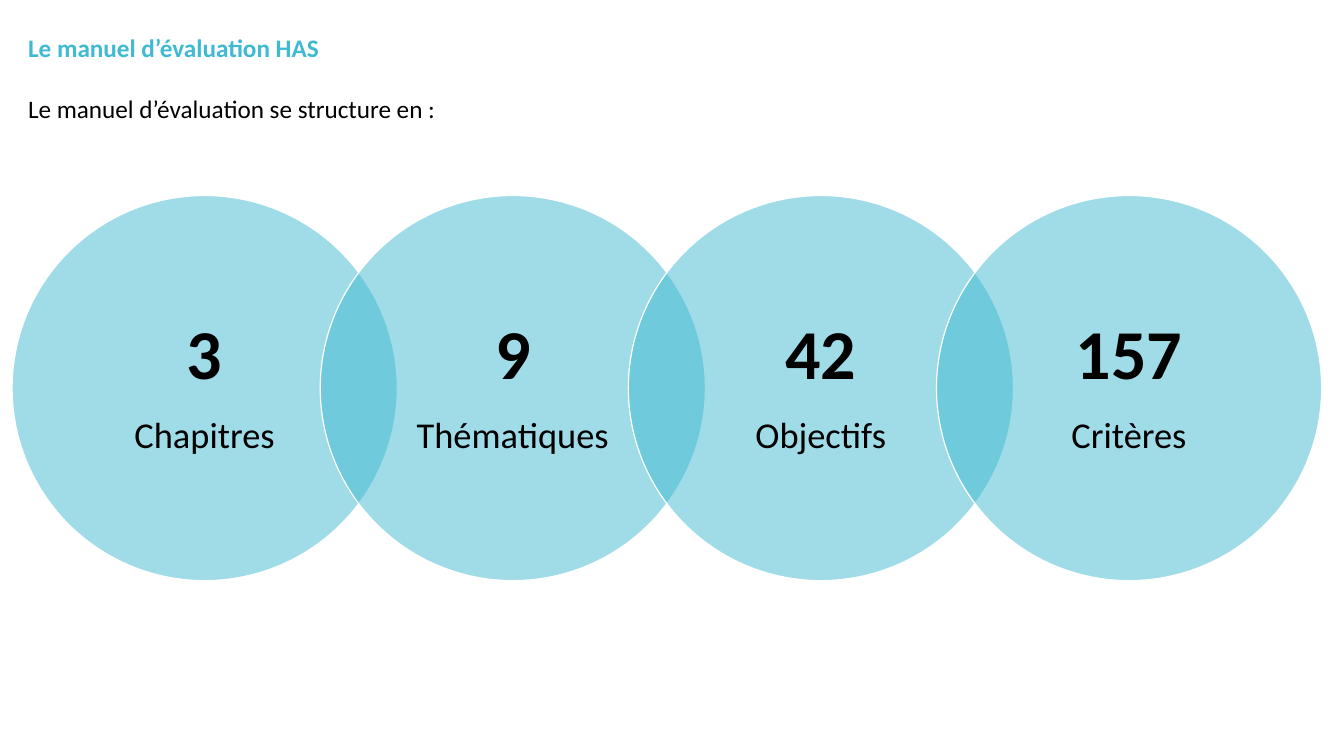
from dataclasses import dataclass

from lxml.etree import SubElement
from pptx import Presentation
from pptx.dml.color import RGBColor
from pptx.enum.shapes import MSO_SHAPE
from pptx.enum.text import MSO_ANCHOR, PP_ALIGN
from pptx.oxml.ns import qn
from pptx.slide import Slide
from pptx.text.text import TextFrame
from pptx.util import Inches, Pt

TURQUOISE = RGBColor(0x40, 0xBA, 0xD2)
BLACK = RGBColor(0x00, 0x00, 0x00)
WHITE = RGBColor(0xFF, 0xFF, 0xFF)
FONT_NAME = "Calibri"

SLIDE_WIDTH = Inches(13.33)
SLIDE_HEIGHT = Inches(7.5)

CIRCLE_DIAMETER = Inches(3.82)
CIRCLE_STEP = int(CIRCLE_DIAMETER * 0.8)
CIRCLES_LEFT = Inches(0.12)
CIRCLES_TOP = (SLIDE_HEIGHT - CIRCLE_DIAMETER) // 2 + Inches(0.1)


@dataclass(frozen=True)
class TextLine:
    text: str
    size: int
    bold: bool = False
    color: RGBColor = BLACK
    space_after: int = 0


@dataclass(frozen=True)
class ManualLevel:
    count: str
    label: str


INTRODUCTION = [
    TextLine("Le manuel d’évaluation HAS", 18, True, TURQUOISE, 22),
    TextLine("Le manuel d’évaluation se structure en :", 18),
]
LEVELS = [
    ManualLevel("3", "Chapitres"),
    ManualLevel("9", "Thématiques"),
    ManualLevel("42", "Objectifs"),
    ManualLevel("157", "Critères"),
]


def write_lines(
    text_frame: TextFrame,
    lines: list[TextLine],
    alignment: PP_ALIGN = PP_ALIGN.LEFT,
    line_spacing: float = 1.0,
) -> None:
    text_frame.word_wrap = True
    for index, line in enumerate(lines):
        paragraph = text_frame.add_paragraph() if index else text_frame.paragraphs[0]
        paragraph.text = line.text
        paragraph.alignment = alignment
        paragraph.line_spacing = line_spacing
        paragraph.space_after = Pt(line.space_after)
        paragraph.font.name = FONT_NAME
        paragraph.font.size = Pt(line.size)
        paragraph.font.bold = line.bold
        paragraph.font.color.rgb = line.color


def add_introduction(slide: Slide) -> None:
    text_box = slide.shapes.add_textbox(
        Inches(0.18), Inches(0.27), Inches(12.94), Inches(2.22)
    )
    write_lines(text_box.text_frame, INTRODUCTION)


def add_level_circle(slide: Slide, column: int, level: ManualLevel) -> None:
    circle = slide.shapes.add_shape(
        MSO_SHAPE.OVAL,
        CIRCLES_LEFT + column * CIRCLE_STEP,
        CIRCLES_TOP,
        CIRCLE_DIAMETER,
        CIRCLE_DIAMETER,
    )
    circle.shadow.inherit = False
    circle.fill.solid()
    circle.fill.fore_color.rgb = TURQUOISE
    color_element = circle.fill._xPr.find(qn("a:solidFill"))[0]
    SubElement(color_element, qn("a:alpha"), val="50000")
    circle.line.color.rgb = WHITE
    circle.line.width = Pt(0.85)

    text_frame = circle.text_frame
    text_frame.vertical_anchor = MSO_ANCHOR.MIDDLE
    text_frame.margin_left = text_frame.margin_right = Inches(0.21)
    text_frame.margin_top = text_frame.margin_bottom = Inches(0.07)
    lines = [
        TextLine(level.count, 50, bold=True, space_after=16),
        TextLine(level.label, 26),
    ]
    write_lines(text_frame, lines, PP_ALIGN.CENTER, 0.9)


def main() -> None:
    presentation = Presentation()
    presentation.slide_width = SLIDE_WIDTH
    presentation.slide_height = SLIDE_HEIGHT
    slide = presentation.slides.add_slide(presentation.slide_layouts[6])
    add_introduction(slide)
    for column, level in enumerate(LEVELS):
        add_level_circle(slide, column, level)
    presentation.save("out.pptx")


if __name__ == "__main__":
    main()
